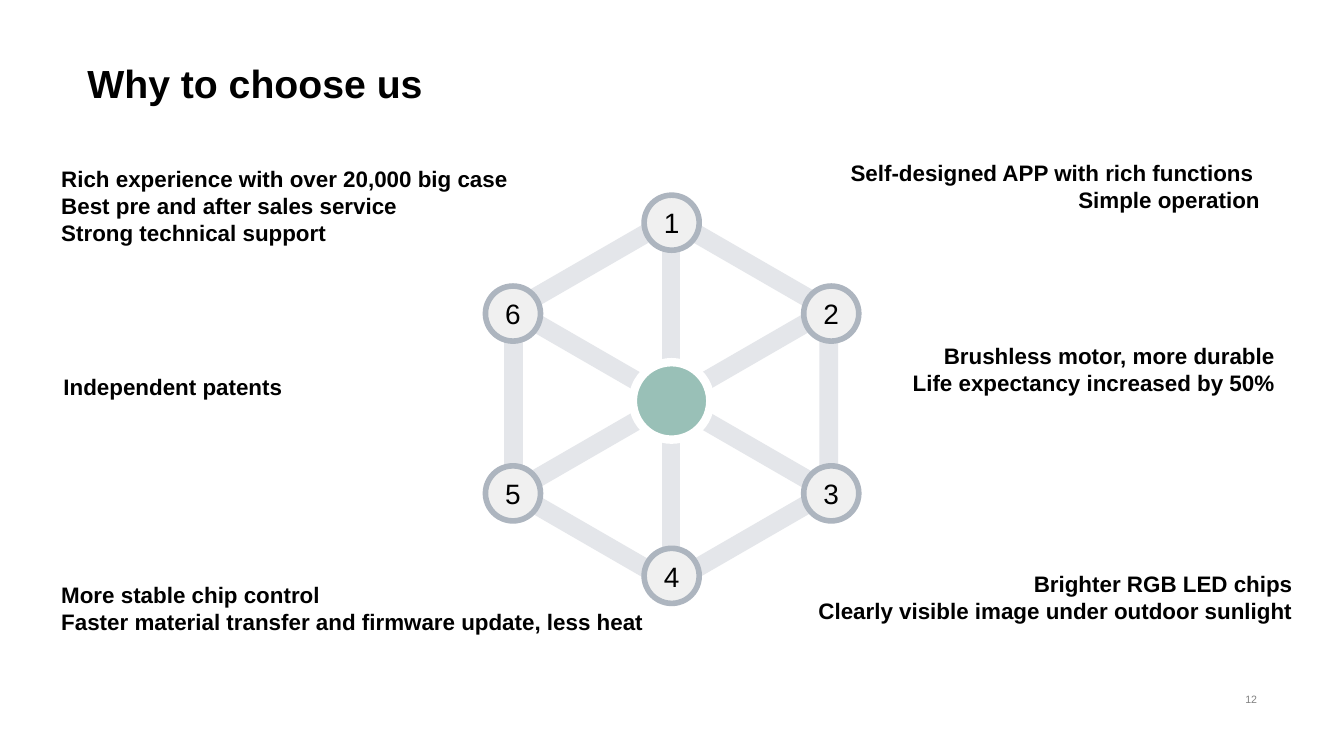
from math import cos, pi, sin

from pptx import Presentation
from pptx.dml.color import RGBColor
from pptx.enum.shapes import MSO_CONNECTOR, MSO_SHAPE
from pptx.enum.text import MSO_ANCHOR, PP_ALIGN
from pptx.oxml.ns import qn
from pptx.util import Pt
from lxml.etree import SubElement

COLORS = {
    "text": "000000",
    "number": "808080",
    "spoke": "E4E6EA",
    "hub": "99C0B7",
    "hub_ring": "FFFFFF",
    "node": "F0F0F0",
    "node_ring": "ADB5BF",
}
CENTER_X, CENTER_Y = 359.8, 214.8
RIM_CENTER_X, RADIUS = 359.5, 97.5

# Label and centre offset of each node from the wheel's centre
NODES = [
    ("1", 0, -95.5), ("2", 85.5, -46.8), ("3", 85.5, 49.5),
    ("4", 0, 93.7), ("5", -85, 49.5), ("6", -85, -46.8),
]

# Left, top, width, height, alignment and lines of each benefit
BENEFITS = [
    (27.8, 84.5, 254, 50, PP_ALIGN.LEFT,
     ["Rich experience with over 20,000 big case",
      "Best pre and after sales service", "Strong technical support"]),
    (29, 188, 223, 29, PP_ALIGN.LEFT, ["Independent patents"]),
    (27.8, 304.7, 326, 38, PP_ALIGN.LEFT,
     ["More stable chip control",
      "Faster material transfer and firmware update, less heat"]),
    (442, 88, 238, 29, PP_ALIGN.RIGHT,
     ["Self-designed APP with rich functions ", "Simple operation"]),
    (457, 177, 231, 38, PP_ALIGN.RIGHT,
     ["Brushless motor, more durable", "Life expectancy increased by 50%"]),
    (427.5, 288, 270, 49, PP_ALIGN.RIGHT,
     ["Brighter RGB LED chips",
      "Clearly visible image under outdoor sunlight"]),
]


def color(name):
    return RGBColor.from_string(COLORS[name])


def format_paragraph(paragraph, size, alignment, bold=False, color_name="text"):
    paragraph.alignment = alignment
    paragraph.font.name = "Arial"
    paragraph.font.size = Pt(size)
    paragraph.font.bold = bold
    paragraph.font.color.rgb = color(color_name)


def set_line(shape, color_name, width):
    shape.line.color.rgb = color(color_name)
    shape.line.width = Pt(width)


def set_margins(frame, horizontal, vertical):
    frame.margin_left = frame.margin_right = Pt(horizontal)
    frame.margin_top = frame.margin_bottom = Pt(vertical)


def add_title(slide, text):
    title = slide.shapes.title
    title.left, title.top, title.width, title.height = Pt(39.6), Pt(0), Pt(641), Pt(61)
    frame = title.text_frame
    frame.text = text
    frame.vertical_anchor = MSO_ANCHOR.BOTTOM
    frame.paragraphs[0].line_spacing = 0.9
    format_paragraph(frame.paragraphs[0], 21, PP_ALIGN.LEFT, bold=True)


def add_hexagon(slide, corners):
    builder = slide.shapes.build_freeform(*corners[0])
    builder.add_line_segments(corners[1:], close=True)
    hexagon = builder.convert_to_shape()
    hexagon.shadow.inherit = False
    hexagon.fill.background()
    set_line(hexagon, "spoke", 10)


def add_spoke(slide, start, end):
    spoke = slide.shapes.add_connector(MSO_CONNECTOR.STRAIGHT, *start, *end)
    set_line(spoke, "spoke", 10)
    SubElement(spoke._element.spPr, qn("a:effectLst"))


def add_circle(slide, center_x, center_y, diameter, fill, ring, ring_width):
    circle = slide.shapes.add_shape(
        MSO_SHAPE.OVAL, Pt(center_x - diameter / 2), Pt(center_y - diameter / 2),
        Pt(diameter), Pt(diameter))
    circle.shadow.inherit = False
    circle.fill.solid()
    circle.fill.fore_color.rgb = color(fill)
    set_line(circle, ring, ring_width)
    return circle


def add_node(slide, label, offset_x, offset_y):
    node = add_circle(slide, CENTER_X + offset_x, CENTER_Y + offset_y,
                      29.5, "node", "node_ring", 3)
    frame = node.text_frame
    set_margins(frame, 0, 0)
    frame.vertical_anchor = MSO_ANCHOR.MIDDLE
    frame.text = label
    format_paragraph(frame.paragraphs[0], 15, PP_ALIGN.CENTER)


def add_benefit(slide, left, top, width, height, alignment, lines):
    box = slide.shapes.add_textbox(Pt(left), Pt(top), Pt(width), Pt(height))
    frame = box.text_frame
    frame.word_wrap = False
    frame.vertical_anchor = MSO_ANCHOR.BOTTOM
    set_margins(frame, 5, 2.7)
    frame.text = "\n".join(lines)
    for paragraph in frame.paragraphs:
        format_paragraph(paragraph, 12, alignment, bold=True)


def add_page_number(slide, text):
    box = slide.shapes.add_textbox(Pt(508.5), Pt(368.5), Pt(172), Pt(12.5))
    frame = box.text_frame
    frame.word_wrap = True
    frame.vertical_anchor = MSO_ANCHOR.MIDDLE
    frame.text = text
    format_paragraph(frame.paragraphs[0], 5.7, PP_ALIGN.RIGHT, color_name="number")


def main():
    presentation = Presentation()
    presentation.slide_width, presentation.slide_height = Pt(720), Pt(405)
    slide = presentation.slides.add_slide(presentation.slide_layouts[5])

    add_title(slide, "Why to choose us")
    add_page_number(slide, "12")

    # Wheel: rim, spokes between opposite corners, hub and nodes
    corners = [(Pt(RIM_CENTER_X + RADIUS * sin(step * pi / 3)),
                Pt(CENTER_Y - RADIUS * cos(step * pi / 3))) for step in range(6)]
    add_hexagon(slide, corners)
    for start, end in zip(corners[:3], corners[3:]):
        add_spoke(slide, start, end)
    add_circle(slide, CENTER_X, CENTER_Y, 41.5, "hub", "hub_ring", 4.5)
    for node in NODES:
        add_node(slide, *node)

    # Benefits around the wheel
    for benefit in BENEFITS:
        add_benefit(slide, *benefit)

    presentation.save("out.pptx")


if __name__ == "__main__":
    main()
